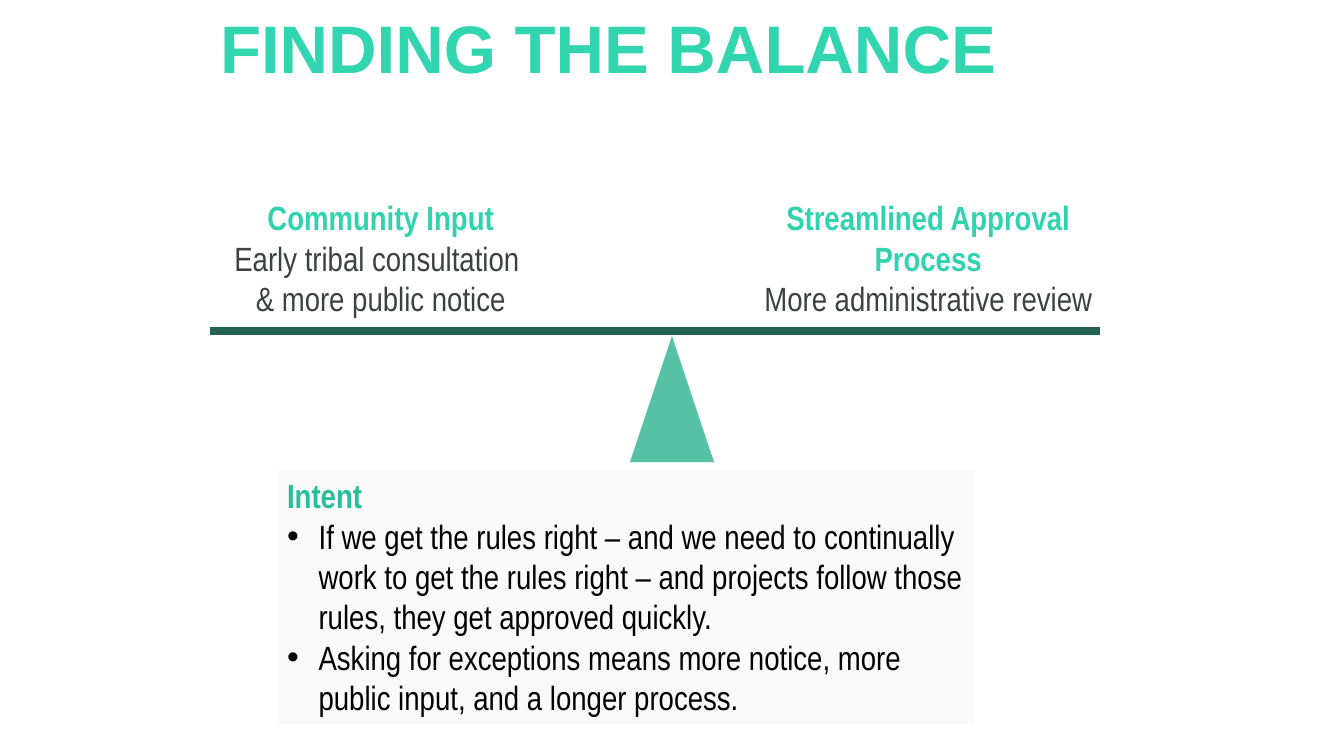
from lxml.etree import SubElement
from pptx import Presentation
from pptx.dml.color import RGBColor
from pptx.enum.shapes import MSO_CONNECTOR as Connector, MSO_SHAPE as Shape
from pptx.enum.text import MSO_ANCHOR as Anchor, MSO_AUTO_SIZE as AutoSize, PP_ALIGN as Align
from pptx.oxml.ns import qn
from pptx.util import Pt

PX = 9525
COLORS = {
    "title": "31D6B0", "heading": "31D3AE", "body": "3E4042", "beam": "246252",
    "fulcrum": "57C1A6", "panel": "F2F2F2", "intent": "27BF9B", "text": "000000",
}


def color(name):
    return RGBColor.from_string(COLORS[name])


def px(*lengths):
    return [length * PX for length in lengths]


def format_runs(paragraph, name, size=24, font="Arial Narrow", bold=False):
    for run in paragraph.runs:
        run.font.name = font
        run.font.size = Pt(size)
        run.font.bold = bold
        run.font.color.rgb = color(name)


def add_bullet(paragraph):
    properties = paragraph._p.get_or_add_pPr()
    properties.set("marL", str(30 * PX))
    properties.set("indent", str(-30 * PX))
    SubElement(properties, qn("a:buFont"), typeface="Arial")
    SubElement(properties, qn("a:buChar"), char="•")


def write_lines(frame, lines, heading, body, align, bullets=False):
    frame.word_wrap = True
    frame.vertical_anchor = Anchor.TOP
    frame.text = "\n".join(lines)
    for index, paragraph in enumerate(frame.paragraphs):
        paragraph.alignment = align
        if bullets and index:
            add_bullet(paragraph)
        format_runs(paragraph, body if index else heading, bold=index == 0)


def place_title(slide, box, text):
    title = slide.shapes.title
    title.left, title.top, title.width, title.height = px(*box)
    frame = title.text_frame
    frame.text = text
    frame.auto_size = AutoSize.NONE
    frame.vertical_anchor = Anchor.BOTTOM
    paragraph = frame.paragraphs[0]
    paragraph.alignment = Align.LEFT
    format_runs(paragraph, "title", 48, "Arial", True)


def add_weight(slide, box, lines):
    shape = slide.shapes.add_textbox(*px(*box))
    write_lines(shape.text_frame, lines, "heading", "body", Align.CENTER)


def add_scale(slide, box):
    left, top, width, height = box
    beam = slide.shapes.add_connector(Connector.STRAIGHT, *px(left, top, left + width, top))
    beam.line.color.rgb = color("beam")
    beam.line.width = Pt(6)
    SubElement(beam._element.spPr, qn("a:effectLst"))
    fulcrum = slide.shapes.add_shape(
        Shape.ISOSCELES_TRIANGLE, *px(left + 400, top + 5, 80, height - 5))
    fulcrum.shadow.inherit = False
    fulcrum.fill.solid()
    fulcrum.fill.fore_color.rgb = color("fulcrum")
    fulcrum.line.fill.background()


def add_intent(slide, box, lines):
    panel = slide.shapes.add_shape(Shape.RECTANGLE, *px(*box))
    panel.shadow.inherit = False
    panel.fill.solid()
    panel.fill.fore_color.rgb = color("panel")
    fill_color = panel._element.spPr.find(qn("a:solidFill"))[0]
    SubElement(fill_color, qn("a:alpha"), val="34000")
    panel.line.fill.background()
    write_lines(panel.text_frame, lines, "intent", "text", Align.LEFT, bullets=True)


def main():
    presentation = Presentation()
    presentation.slide_width, presentation.slide_height = px(1280, 720)
    slide = presentation.slides.add_slide(presentation.slide_layouts[5])
    place_title(slide, (200, 28, 872, 60), "FINDING THE BALANCE")
    add_weight(slide, (712, 183, 344, 126), [
        "Streamlined Approval Process", "More administrative review"])
    add_weight(slide, (200, 183, 325, 126), [
        "Community Input", "Early tribal consultation ", "& more public notice"])
    add_scale(slide, (200, 315, 848, 125))
    add_intent(slide, (264, 448, 664, 242), [
        "Intent",
        "If we get the rules right – and we need to continually work to get the rules right "
        "– and projects follow those rules, they get approved quickly.",
        "Asking for exceptions means more notice, more public input, and a longer process.",
    ])
    presentation.save("out.pptx")


if __name__ == "__main__":
    main()
